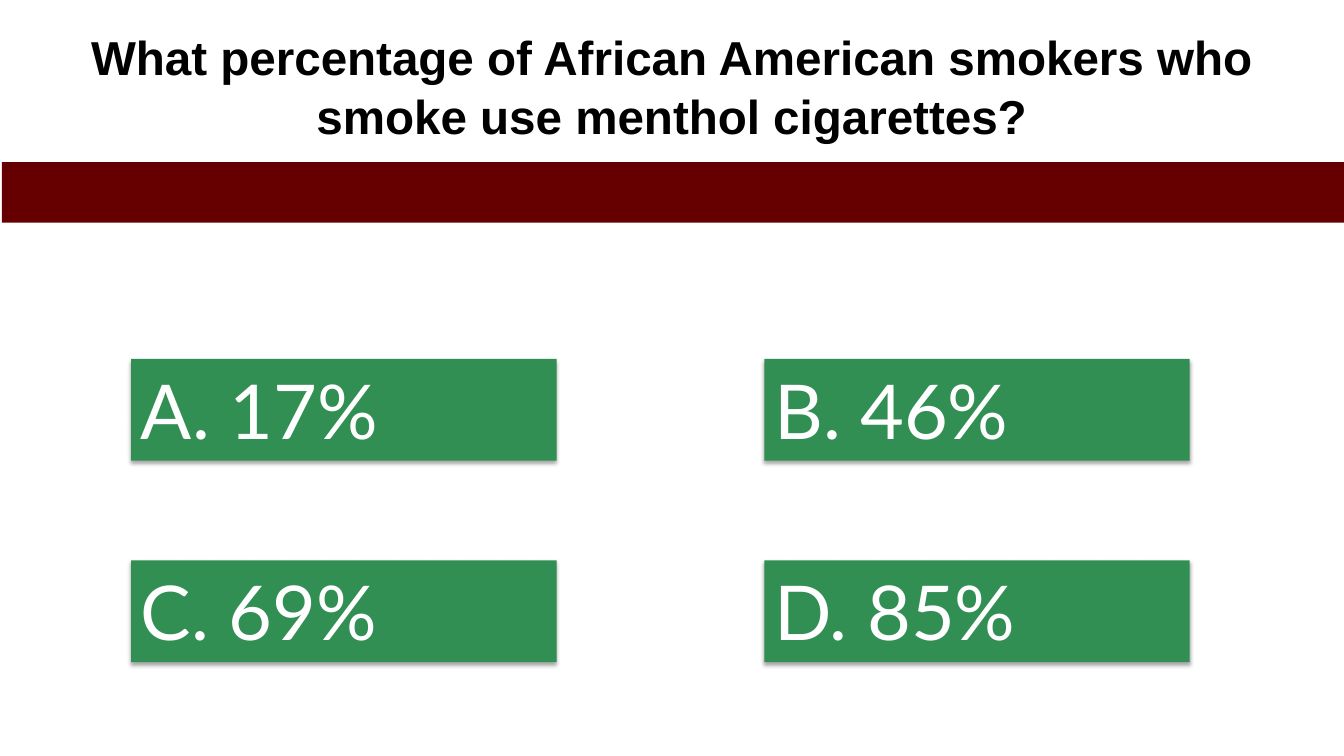
from lxml import etree
from pptx import Presentation
from pptx.dml.color import RGBColor
from pptx.enum import shapes, text
from pptx.oxml import ns
from pptx.util import Inches, Pt

QUESTION = "What percentage of African American smokers who smoke use menthol cigarettes?"
ANSWERS = [
    ["A. 17%", "B. 46%"],
    ["C. 69%", "D. 85%"],
]
COLUMN_LEFTS = (1.3, 7.58)
FIRST_ROW_TOP, ROW_STEP = 3.56, 2
ANSWER_SIZE = (4.22, 1.01)

BLACK = RGBColor(0x00, 0x00, 0x00)
WHITE = RGBColor(0xFF, 0xFF, 0xFF)
MAROON = RGBColor(0x66, 0x00, 0x00)
GREEN = RGBColor(0x32, 0x8F, 0x54)


def style_text(para, size, font, color, align, bold=False):
    para.alignment = align
    for span in para.runs:
        span.font.size = Pt(size)
        span.font.name = font
        span.font.bold = bold
        span.font.color.rgb = color


def add_block(page, left, top, width, height, color):
    """Add a flat rectangle without outline or shadow."""
    block = page.shapes.add_shape(
        shapes.MSO_SHAPE.RECTANGLE,
        Inches(left), Inches(top), Inches(width), Inches(height))
    block.shadow.inherit = False
    block.fill.solid()
    block.fill.fore_color.rgb = color
    block.line.fill.background()
    return block


def add_soft_shadow(block):
    effects = block._element.spPr.find(ns.qn("a:effectLst"))
    shadow = etree.SubElement(
        effects, ns.qn("a:outerShdw"), blurRad=str(Pt(3.1)),
        dist=str(Pt(1.8)), dir="5400000", rotWithShape="0")
    color = etree.SubElement(shadow, ns.qn("a:srgbClr"), val=str(BLACK))
    etree.SubElement(color, ns.qn("a:alpha"), val="35000")


def add_question(page):
    box = page.shapes.add_textbox(Inches(0), Inches(0.17), Inches(13.33), Inches(1.4))
    frame = box.text_frame
    frame.word_wrap = True
    frame.margin_top = Inches(0.08)
    frame.text = QUESTION
    para = frame.paragraphs[0]
    para.line_spacing = 1.04
    style_text(para, 34, "Arial", BLACK, text.PP_ALIGN.CENTER, bold=True)


def add_answer(page, left, top, answer):
    block = add_block(page, left, top, *ANSWER_SIZE, GREEN)
    add_soft_shadow(block)
    frame = block.text_frame
    frame.text = answer
    frame.word_wrap = True
    frame.vertical_anchor = text.MSO_ANCHOR.TOP
    style_text(frame.paragraphs[0], 54, "Lato", WHITE, text.PP_ALIGN.LEFT)


def main():
    deck = Presentation()
    deck.slide_width, deck.slide_height = Inches(13.33), Inches(7.5)
    page = deck.slides.add_slide(deck.slide_layouts[6])
    add_question(page)
    for row, answers in enumerate(ANSWERS):
        for left, answer in zip(COLUMN_LEFTS, answers):
            add_answer(page, left, FIRST_ROW_TOP + row * ROW_STEP, answer)
    add_block(page, 0.02, 1.61, 13.33, 0.6, MAROON)
    deck.save("out.pptx")


if __name__ == "__main__":
    main()
